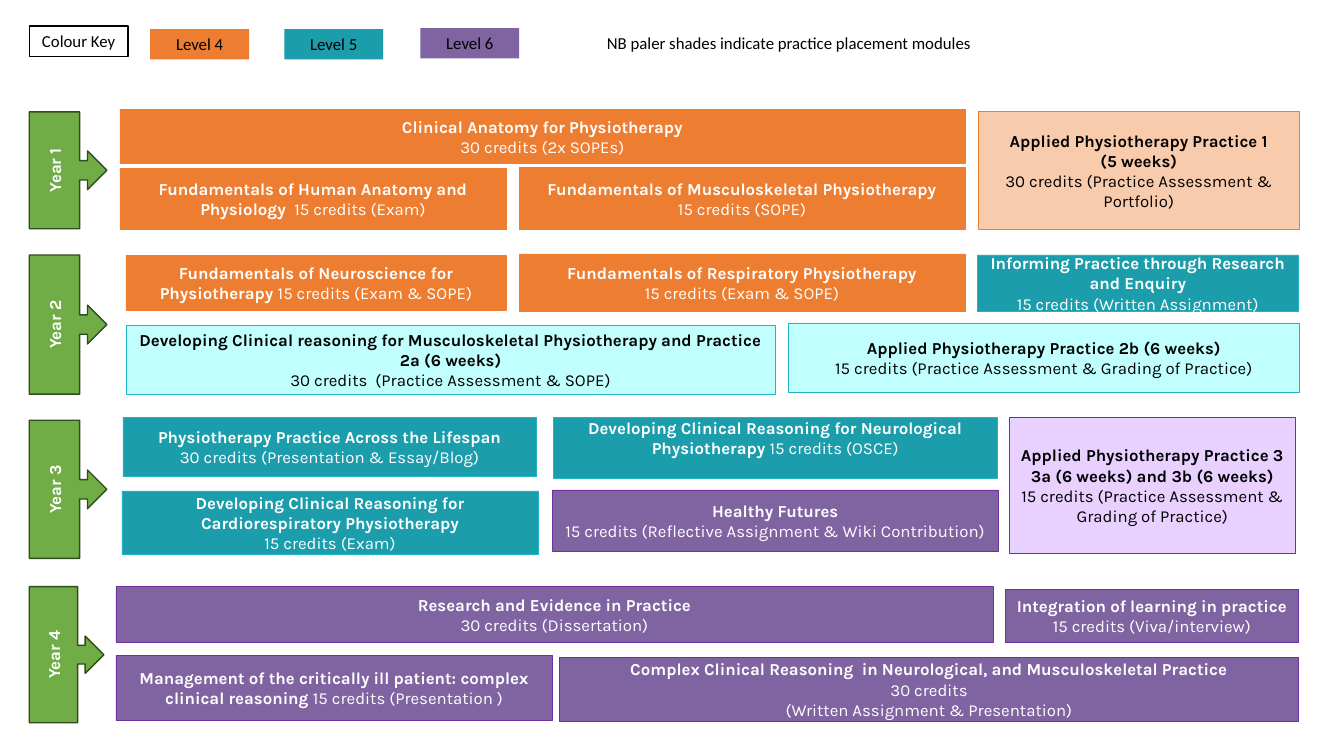
from pptx import Presentation
from pptx import util as u
from pptx.dml.color import RGBColor
from pptx.enum import shapes, text

In = u.Inches
MID, TOP = text.MSO_ANCHOR.MIDDLE, text.MSO_ANCHOR.TOP

# Level: fill, line, text colour
LOOK = {
    "4": ("ED7D31", "ED7D31", "FFFFFF"),
    "4 pale": ("F8CBAD", "ED7D31", "000000"),
    "5": ("1C9DAC", "1FB3C5", "FFFFFF"),
    "5 pale": ("C1FFFF", "1FB3C5", "000000"),
    "6": ("8064A2", "7030A0", "FFFFFF"),
    "6 pale": ("E8D1FF", "7030A0", "000000"),
}

# Year: row top, tag offset, tag size, then modules as
# (level, (left, top, width, height) within the row, paragraphs of (bold, plain))
YEARS = [
    ("Year 1", 1.09, 0.02, (0.77, 1.16), [
        ("4", (0.9, 0, 8.38, 0.53),
         [("Clinical Anatomy for Physiotherapy", ""), ("", "30 credits (2x SOPEs)")]),
        ("4", (0.9, 0.58, 3.83, 0.61),
         [("Fundamentals of Human Anatomy and Physiology  ", "15 credits (Exam)")]),
        ("4", (4.86, 0.57, 4.42, 0.62),
         [("Fundamentals of Musculoskeletal Physiotherapy", ""), ("", "15 credits (SOPE)")]),
        ("4 pale", (9.41, 0.02, 3.19, 1.17),
         [("Applied Physiotherapy Practice 1", ""), ("(5 weeks)", ""),
          ("", "30 credits (Practice Assessment & Portfolio)")]),
    ]),
    ("Year 2", 2.52, 0.01, (0.77, 1.38), [
        ("4", (0.96, 0.01, 3.77, 0.55),
         [("Fundamentals of Neuroscience for Physiotherapy ", "15 credits (Exam & SOPE)")]),
        ("4", (4.86, 0, 4.42, 0.57),
         [("Fundamentals of Respiratory Physiotherapy", ""), ("", "15 credits (Exam & SOPE)")]),
        ("5", (9.4, 0.01, 3.19, 0.56),
         [("Informing Practice through Research and Enquiry", ""),
          ("", "15 credits (Written Assignment)")]),
        ("5 pale", (0.96, 0.71, 6.44, 0.68),
         [("Developing Clinical reasoning for Musculoskeletal Physiotherapy "
           "and Practice 2a (6 weeks)", ""),
          ("", "30 credits  (Practice Assessment & SOPE)")]),
        ("5 pale", (7.53, 0.69, 5.07, 0.68),
         [("Applied Physiotherapy Practice 2b (6 weeks)", ""),
          ("", "15 credits (Practice Assessment & Grading of Practice)")]),
    ]),
    ("Year 3", 4.14, 0.03, (0.77, 1.37), [
        ("5", (0.93, 0, 4.1, 0.59),
         [("Physiotherapy Practice Across the Lifespan", ""),
          ("", "30 credits (Presentation & Essay/Blog)")]),
        ("5", (0.92, 0.73, 4.13, 0.63),
         [("Developing Clinical Reasoning for Cardiorespiratory Physiotherapy", ""),
          ("", "15 credits (Exam)")]),
        ("5", (5.2, 0, 4.4, 0.61),
         [("Developing Clinical Reasoning for Neurological Physiotherapy ",
           "15 credits (OSCE)")], TOP),
        ("6", (5.19, 0.72, 4.42, 0.61),
         [("Healthy Futures", ""),
          ("", "15 credits (Reflective Assignment & Wiki Contribution)")]),
        ("6 pale", (9.72, 0, 2.84, 1.35),
         [("Applied Physiotherapy Practice 3", ""), ("3a (6 weeks) and 3b (6 weeks)", ""),
          ("", "15 credits (Practice Assessment & Grading of Practice)")]),
    ]),
    ("Year 4", 5.82, 0, (0.74, 1.35), [
        ("6", (0.86, 0, 8.7, 0.55),
         [("Research and Evidence in Practice", ""), ("", "30 credits (Dissertation)")]),
        ("6", (9.68, 0.03, 2.91, 0.52),
         [("Integration of learning in practice ", "15 credits (Viva/interview)")]),
        ("6", (0.86, 0.68, 4.33, 0.65),
         [("Management of the critically ill patient: complex clinical reasoning ",
           "15 credits (Presentation )")]),
        ("6", (5.26, 0.7, 7.33, 0.64),
         [("Complex Clinical Reasoning  in Neurological, and Musculoskeletal Practice", ""),
          ("", "30 credits"), ("", "(Written Assignment & Presentation)")]),
    ]),
]


def paint(part, color):
    part.solid()
    part.fore_color.rgb = RGBColor.from_string(color)


def write(shape, paras, face, color, **frame):
    """Fill a shape with centred paragraphs of (bold, plain) text."""
    body = shape.text_frame
    for name, value in {"word_wrap": True, "vertical_anchor": MID, **frame}.items():
        setattr(body, name, value)
    for i, pair in enumerate(paras):
        para = body.paragraphs[0] if i == 0 else body.add_paragraph()
        para.alignment = text.PP_ALIGN.CENTER
        for words, bold in zip(pair, (True, False)):
            if words:
                run = para.add_run()
                run.text = words
                for name, value in {"name": face, "size": u.Pt(12), "bold": bold}.items():
                    setattr(run.font, name, value)
                run.font.color.rgb = RGBColor.from_string(color)


def block(slide, kind, box, fill, line, width):
    shape = slide.shapes.add_shape(kind, *map(In, box))
    shape.shadow.inherit = False
    paint(shape.fill, fill)
    if line:
        paint(shape.line.fill, line)
        shape.line.width = u.Pt(width)
    else:
        shape.line.fill.background()
    return shape


def key(slide, left, top):
    """Colour key and its note."""
    chips = [("Colour Key", 0, 0, "FFFFFF", "000000"),
             ("Level 4", 1.2, 0.03, LOOK["4"][0], None),
             ("Level 5", 2.53, 0.03, LOOK["5"][0], None),
             ("Level 6", 3.88, 0.02, LOOK["6"][0], None)]
    for label, x, y, fill, line in chips:
        chip = block(slide, shapes.MSO_SHAPE.RECTANGLE,
                     (left + x, top + y, 0.98, 0.3), fill, line, 1)
        write(chip, [("", label)], "Calibri", "000000", vertical_anchor=TOP)
    note = slide.shapes.add_textbox(*map(In, (left + 5.19, top + 0.02, 4.69, 0.3)))
    write(note, [("", "NB paler shades indicate practice placement modules")],
          "Calibri", "000000", vertical_anchor=TOP)


def tag(slide, label, box):
    """Green year arrow with upward text."""
    arrow = block(slide, shapes.MSO_SHAPE.RIGHT_ARROW_CALLOUT, box, "70AD47", "314C1F", 1)
    write(arrow, [(label, "")], "Karla", "FFFFFF")
    arrow.text_frame._txBody.bodyPr.set("vert", "vert270")


def module(slide, left, top, level, box, paras, anchor=MID):
    x, y, w, h = box
    fill, line, color = LOOK[level]
    card = block(slide, shapes.MSO_SHAPE.RECTANGLE,
                 (left + x, top + y, w, h), fill, line, 0.5)
    inset = {"margin_top": 0} if anchor == TOP else {}
    write(card, paras, "Karla", color, vertical_anchor=anchor, **inset)


def year(slide, left, top, label, drop, size, mods):
    """One year: its arrow and its modules."""
    tag(slide, label, (left, top + drop, *size))
    for mod in mods:
        module(slide, left, top, *mod)


def main():
    deck = Presentation()
    deck.slide_width, deck.slide_height = In(13.33), In(7.5)
    slide = deck.slides.add_slide(deck.slide_layouts[6])
    key(slide, 0.29, 0.26)
    for label, top, drop, size, mods in YEARS:
        year(slide, 0.29, top, label, drop, size, mods)
    deck.save("out.pptx")


if __name__ == "__main__":
    main()
